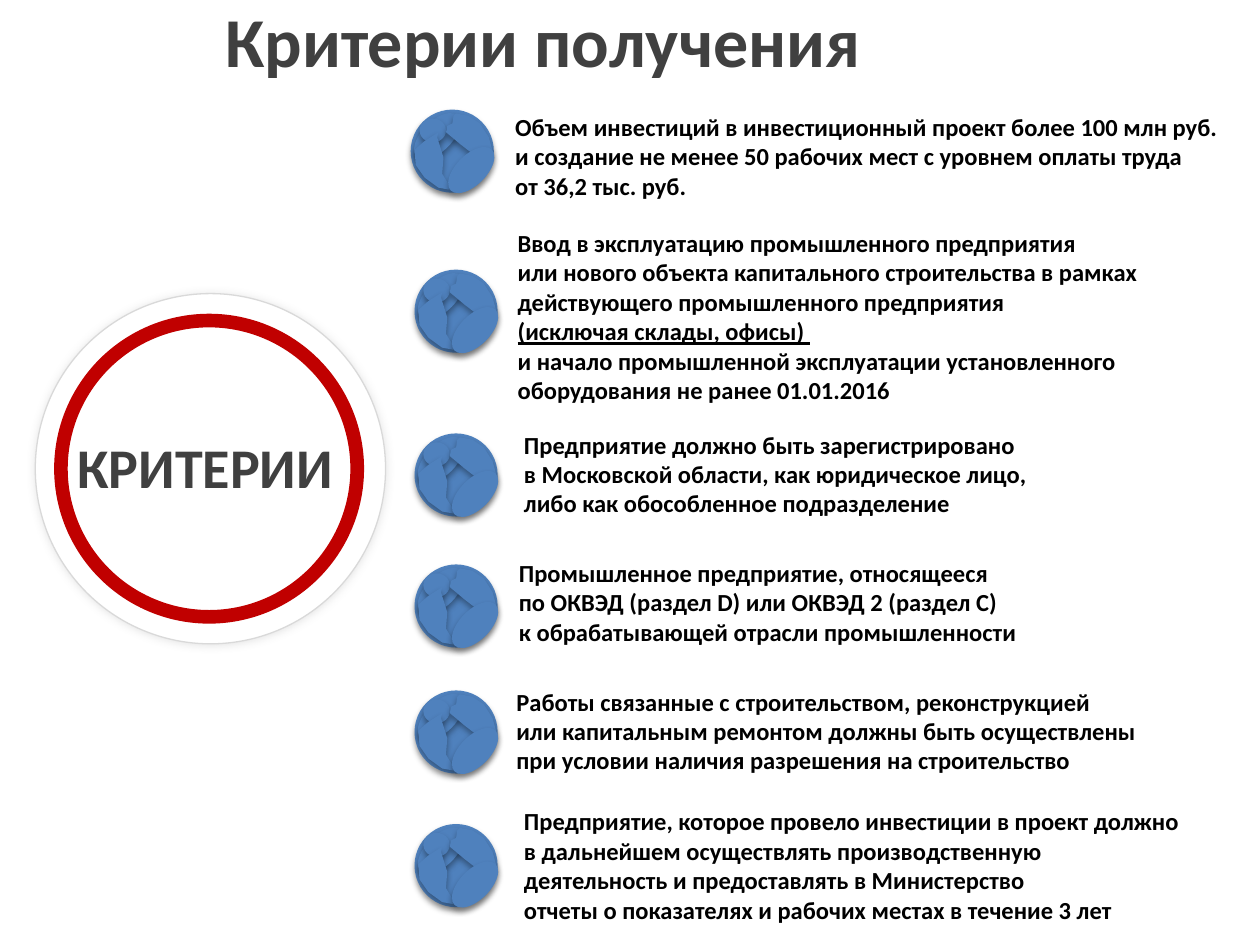
from dataclasses import dataclass

from lxml.etree import SubElement
from pptx import Presentation
from pptx.dml.color import RGBColor
from pptx.enum.shapes import MSO_SHAPE
from pptx.enum.text import MSO_ANCHOR, MSO_AUTO_SIZE, PP_ALIGN
from pptx.oxml.ns import qn
from pptx.util import Pt

PX = 9144
COLORS = {
    "badge": "4F81BD", "ring": "C00000", "disc": "FFFFFF", "disc_line": "D9D9D9",
    "disc_shadow": "BFBFBF", "heading": "404040", "text": "000000", "shadow": "000000",
}


@dataclass(frozen=True)
class Shadow:
    color: str
    opacity: int
    blur: float
    distance: float
    angle: int


@dataclass(frozen=True)
class Oval:
    left: int
    top: int
    width: int
    height: int
    rotation: int = 0


@dataclass(frozen=True)
class Label:
    left: int
    top: int
    width: int
    height: int
    lines: tuple
    size: int = 14
    color: str = "text"
    align: PP_ALIGN = PP_ALIGN.LEFT
    anchor: MSO_ANCHOR = MSO_ANCHOR.TOP
    underlined: int = -1


@dataclass(frozen=True)
class Criterion:
    badge_left: int
    badge_top: int
    label: Label


BADGE_SHADOW = Shadow("shadow", 32, 3.5, 2.2, 90)
DISC_SHADOW = Shadow("disc_shadow", 40, 5, 0, 0)
BACK_OVALS = (Oval(0, 0, 66, 66), Oval(-2, 9, 46, 24, 315), Oval(7, 7, 21, 19))
FRONT_OVAL = Oval(25, 36, 46, 24, 135)
RIGHT_LEAF = (
    (36, 3), (34, 5), (33, 11), (29, 13), (28, 18), (40, 28), (53, 38),
    (55, 44), (62, 39), (65, 33), (62, 22), (55, 11), (46, 5),
)
LEFT_LEAF = (
    (22, 18), (11, 25), (3, 32), (4, 44), (11, 54), (22, 62),
    (33, 64), (25, 51), (26, 38), (21, 22),
)

TITLE = Label(169, -27, 606, 117, ("Критерии получения",), 40, "heading",
              anchor=MSO_ANCHOR.MIDDLE)
DISC_LABEL = Label(45, 338, 236, 64, ("КРИТЕРИИ",), 32, "heading", PP_ALIGN.CENTER)
CRITERIA = (
    Criterion(326, 87, Label(399, 84, 601, 81, (
        "Объем инвестиций в инвестиционный проект более 100 млн руб. ",
        "и создание не менее 50 рабочих мест с уровнем оплаты труда ",
        "от 36,2 тыс. руб."))),
    Criterion(329, 214, Label(401, 176, 599, 151, (
        "Ввод в эксплуатацию промышленного предприятия",
        "или нового объекта капитального строительства в рамках ",
        "действующего промышленного предприятия ",
        "(исключая склады, офисы) ",
        "и начало промышленной эксплуатации установленного ",
        "оборудования не ранее 01.01.2016"), underlined=3)),
    Criterion(329, 344, Label(406, 336, 542, 81, (
        "Предприятие должно быть зарегистрировано ",
        "в Московской области, как юридическое лицо, ",
        "либо как обособленное подразделение"))),
    Criterion(329, 448, Label(402, 438, 510, 81, (
        "Промышленное предприятие, относящееся ",
        "по ОКВЭД (раздел D) или ОКВЭД 2 (раздел C) ",
        "к обрабатывающей отрасли промышленности"))),
    Criterion(329, 548, Label(400, 540, 544, 81, (
        "Работы связанные с строительством, реконструкцией ",
        "или капитальным ремонтом должны быть осуществлены ",
        "при условии наличия разрешения на строительство"))),
    Criterion(329, 654, Label(406, 635, 542, 104, (
        "Предприятие, которое провело инвестиции в проект должно "
        "в дальнейшем осуществлять производственную ",
        "деятельность и предоставлять в Министерство ",
        "отчеты о показателях и рабочих местах в течение 3 лет"))),
)


def rgb(name: str) -> RGBColor:
    """Look up a named colour."""
    return RGBColor.from_string(COLORS[name])


def paint(shape, fill: str, shadow: Shadow | None = None) -> None:
    """Give a shape a flat fill, no outline and an optional outer shadow."""
    shape.fill.solid()
    shape.fill.fore_color.rgb = rgb(fill)
    shape.line.fill.background()
    shape.shadow.inherit = False
    if shadow:
        effects = shape._element.spPr.find(qn("a:effectLst"))
        outer = SubElement(effects, qn("a:outerShdw"), {
            "blurRad": str(Pt(shadow.blur)), "dist": str(Pt(shadow.distance)),
            "dir": str(shadow.angle * 60000), "algn": "ctr", "rotWithShape": "0"})
        color = SubElement(outer, qn("a:srgbClr"), val=COLORS[shadow.color])
        SubElement(color, qn("a:alpha"), val=str(shadow.opacity * 1000))


def add_oval(shapes, oval: Oval, left: int = 0, top: int = 0, kind=MSO_SHAPE.OVAL):
    """Add a round preset shape, offset by left and top."""
    shape = shapes.add_shape(kind, (left + oval.left) * PX, (top + oval.top) * PX,
                             oval.width * PX, oval.height * PX)
    shape.rotation = oval.rotation
    return shape


def add_leaf(shapes, points: tuple, left: int, top: int):
    """Add a leaf outline, offset by left and top."""
    start, *rest = [(left + x, top + y) for x, y in points]
    builder = shapes.build_freeform(*start, scale=PX)
    builder.add_line_segments(rest, close=True)
    return builder.convert_to_shape()


def add_badge(page, left: int, top: int) -> None:
    """Draw one round badge as a group of overlapping shapes."""
    shapes = page.shapes.add_group_shape().shapes
    parts = [add_oval(shapes, oval, left, top) for oval in BACK_OVALS]
    parts += [add_leaf(shapes, leaf, left, top) for leaf in (RIGHT_LEAF, LEFT_LEAF)]
    parts.append(add_oval(shapes, FRONT_OVAL, left, top))
    for part in parts:
        paint(part, "badge", BADGE_SHADOW)


def add_label(page, label: Label) -> None:
    """Draw a bold text box with one line break between lines."""
    box = page.shapes.add_textbox(label.left * PX, label.top * PX,
                                  label.width * PX, label.height * PX)
    frame = box.text_frame
    frame.word_wrap = True
    frame.vertical_anchor = label.anchor
    if label.anchor == MSO_ANCHOR.TOP:
        frame.auto_size = MSO_AUTO_SIZE.SHAPE_TO_FIT_TEXT
    para = frame.paragraphs[0]
    para.alignment = label.align
    para.font.name = "Calibri"
    para.font.size = Pt(label.size)
    para.font.bold = True
    para.font.color.rgb = rgb(label.color)
    for index, line in enumerate(label.lines):
        if index:
            para.add_line_break()
        span = para.add_run()
        span.text = line
        if index == label.underlined:
            span.font.underline = True


def add_disc(page) -> None:
    """Draw the white disc with its red ring and caption."""
    disc = add_oval(page.shapes, Oval(28, 233, 278, 278))
    paint(disc, "disc", DISC_SHADOW)
    disc.line.color.rgb = rgb("disc_line")
    disc.line.width = Pt(0.75)
    ring = add_oval(page.shapes, Oval(43, 249, 246, 246), kind=MSO_SHAPE.DONUT)
    ring.adjustments[0] = 0.044
    paint(ring, "ring")
    add_label(page, DISC_LABEL)


def main() -> None:
    """Build the criteria slide and save it."""
    deck = Presentation()
    deck.slide_width, deck.slide_height = 1000 * PX, 750 * PX
    page = deck.slides.add_slide(deck.slide_layouts[6])
    add_label(page, TITLE)
    add_disc(page)
    for criterion in CRITERIA:
        add_badge(page, criterion.badge_left, criterion.badge_top)
        add_label(page, criterion.label)
    deck.save("out.pptx")


if __name__ == "__main__":
    main()
